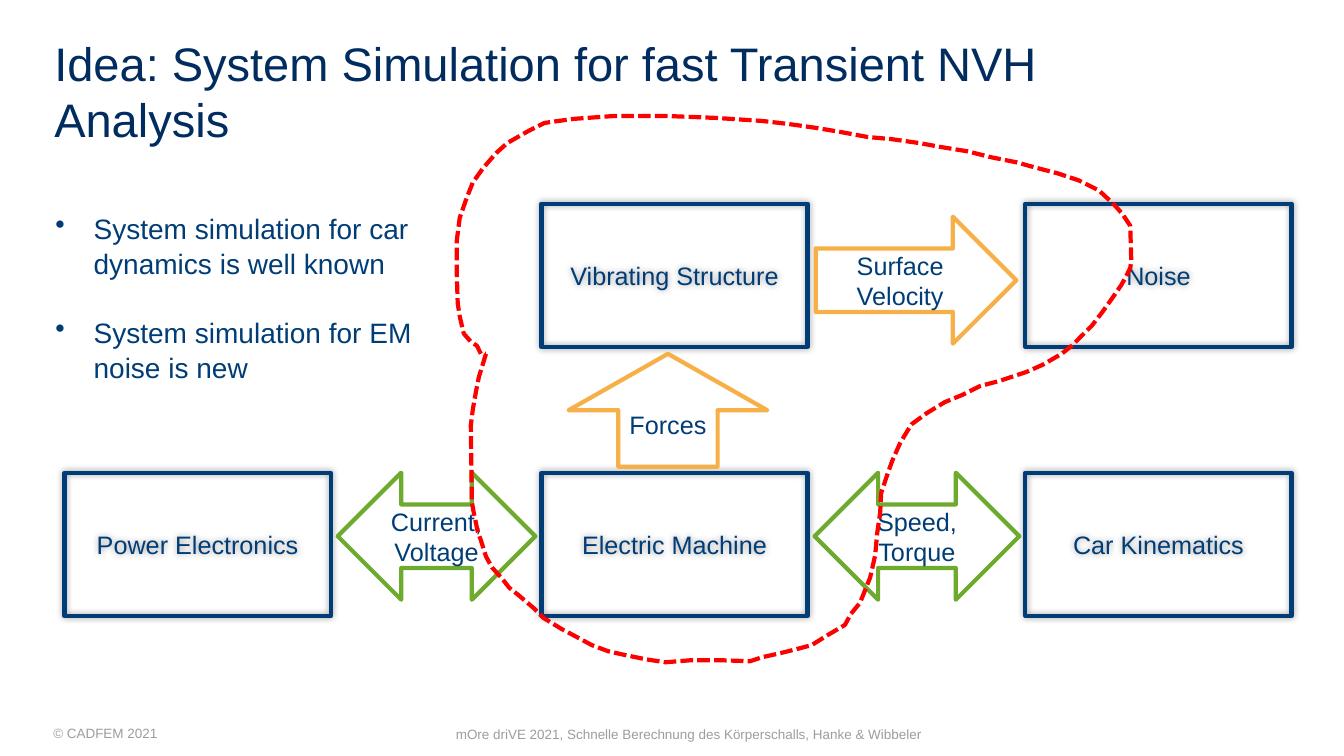
import pptx
import pptx.dml.color
import pptx.enum.dml
import pptx.enum.shapes
import pptx.enum.text
import pptx.oxml
import pptx.oxml.ns
import pptx.util
from pptx.util import Inches

RGB = pptx.dml.color.RGBColor.from_string
SHAPE = pptx.enum.shapes.MSO_SHAPE
ALIGN = pptx.enum.text.PP_ALIGN
ANCHOR = pptx.enum.text.MSO_ANCHOR


class Theme:
    font = "Arial"
    white = RGB("FFFFFF")
    title = RGB("002C5F")
    blue = RGB("003D77")
    green = RGB("6DAA2D")
    orange = RGB("F7B047")
    red = RGB("FF0000")
    grey = RGB("9D9D9C")
    title_size = 33.6
    bullet_size = 20
    label_size = 18
    footer_size = 9.6
    line_width = pptx.util.Pt(3)


def write(shape, lines, size, color, align=ALIGN.CENTER, anchor=ANCHOR.MIDDLE):
    frame = shape.text_frame
    frame.word_wrap = True
    frame.vertical_anchor = anchor
    frame.text = "\n".join(lines)
    for paragraph in frame.paragraphs:
        paragraph.alignment = align
        paragraph.font.name = Theme.font
        paragraph.font.size = pptx.util.Pt(size)
        paragraph.font.color.rgb = color
    return frame


def add_outline(kind, left, top, width, height, color, lines):
    shape = slide.shapes.add_shape(
        kind, Inches(left), Inches(top), Inches(width), Inches(height))
    shape.shadow.inherit = False
    shape.fill.background()
    shape.line.color.rgb = color
    shape.line.width = Theme.line_width
    write(shape, lines, Theme.label_size, Theme.blue)
    return shape


presentation = pptx.Presentation()
presentation.slide_width = Inches(13.33)
presentation.slide_height = Inches(7.5)
slide = presentation.slides.add_slide(presentation.slide_layouts[6])

copyright_box = slide.shapes.add_shape(
    SHAPE.RECTANGLE, Inches(0.43), Inches(7.15), Inches(1.39), Inches(0.25))
copyright_box.shadow.inherit = False
copyright_box.fill.solid()
copyright_box.fill.fore_color.rgb = Theme.white
copyright_box.line.fill.background()
copyright_frame = write(
    copyright_box, ["© CADFEM 2021"], Theme.footer_size, Theme.grey, ALIGN.LEFT)
copyright_frame.margin_right = 0

title = slide.shapes.add_textbox(
    Inches(0.44), Inches(0.29), Inches(10.64), Inches(0.55))
write(title, ["Idea: System Simulation for fast Transient NVH Analysis"],
      Theme.title_size, Theme.title, ALIGN.LEFT, ANCHOR.TOP)

footer = slide.shapes.add_textbox(
    Inches(1.83), Inches(7.16), Inches(10), Inches(0.25))
write(footer, ["mOre driVE 2021, Schnelle Berechnung des Körperschalls, Hanke & Wibbeler"],
      Theme.footer_size, Theme.grey)

columns = (0.64, 5.37, 10.17)
rows = (2.02, 4.69)
blocks = [
    ("Noise", 2, 0),
    ("Power Electronics", 0, 1),
    ("Electric Machine", 1, 1),
    ("Car Kinematics", 2, 1),
    ("Vibrating Structure", 1, 0),
]
for label, column, row in blocks:
    block = add_outline(SHAPE.FLOWCHART_PROCESS, columns[column], rows[row],
                        2.64, 1.42, Theme.blue, [label])
    effects = block._element.spPr.find(pptx.oxml.ns.qn("a:effectLst"))
    effects.append(pptx.oxml.parse_xml(
        f'<a:outerShdw {pptx.oxml.ns.nsdecls("a")} blurRad="63500" dist="0" dir="0">'
        '<a:srgbClr val="000000"><a:alpha val="40000"/></a:srgbClr></a:outerShdw>'))

arrows = [
    (SHAPE.LEFT_RIGHT_ARROW, 3.35, 4.69, 1.96, 1.26, Theme.green, ["Current,", "Voltage"]),
    (SHAPE.LEFT_RIGHT_ARROW, 8.08, 4.69, 2.03, 1.26, Theme.green, ["Speed,", "Torque"]),
    (SHAPE.RIGHT_ARROW, 8.09, 2.15, 1.99, 1.26, Theme.orange, ["Surface Velocity"]),
    (SHAPE.UP_ARROW, 5.64, 3.51, 1.97, 1.12, Theme.orange, ["Forces"]),
]
for arrow in arrows:
    add_outline(*arrow)

scope_points = [
    (482, 351), (479, 361), (475, 374), (472, 389), (469, 406), (467, 422),
    (468, 498), (470, 509), (474, 528), (477, 536), (482, 552), (488, 563),
    (498, 574), (505, 583), (515, 591), (529, 603), (539, 613), (557, 624),
    (574, 633), (587, 640), (603, 646), (616, 649), (640, 654), (660, 657),
    (685, 655), (715, 655), (744, 656), (756, 652), (774, 648), (790, 644),
    (805, 640), (821, 630), (838, 620), (844, 609), (853, 598), (859, 583),
    (863, 573), (868, 551), (870, 529), (873, 508), (874, 489), (880, 471),
    (885, 457), (893, 439), (904, 421), (919, 410), (937, 399), (954, 392),
    (972, 383), (991, 378), (1018, 369), (1034, 362), (1053, 351), (1063, 343),
    (1072, 334), (1083, 323), (1093, 310), (1103, 296), (1112, 283), (1117, 274),
    (1121, 266), (1122, 259), (1121, 224), (1113, 212), (1105, 203), (1090, 189),
    (1070, 179), (1049, 172), (1026, 166), (1008, 161), (983, 156), (959, 150),
    (934, 146), (912, 142), (884, 138), (861, 136), (834, 131), (810, 127),
    (782, 123), (756, 120), (710, 117), (660, 115), (610, 115), (568, 118),
    (540, 122), (524, 130), (503, 142), (492, 152), (479, 167), (469, 181),
    (463, 196), (456, 216), (453, 239), (453, 270), (454, 301), (456, 314),
    (460, 331), (467, 339), (473, 343), (477, 351),
]
builder = slide.shapes.build_freeform(*scope_points[0], scale=Inches(0.01))
builder.add_line_segments(scope_points[1:], close=True)
scope = builder.convert_to_shape()
scope.shadow.inherit = False
scope.fill.background()
scope.line.color.rgb = Theme.red
scope.line.width = Theme.line_width
scope.line.dash_style = pptx.enum.dml.MSO_LINE.SQUARE_DOT
scope.line._ln.find(pptx.oxml.ns.qn("a:prstDash")).set("val", "sysDash")

bullets = slide.shapes.add_textbox(
    Inches(0.45), Inches(2.03), Inches(3.89), Inches(1.78))
bullet_frame = write(
    bullets,
    ["System simulation for car dynamics is well known",
     "System simulation for EM noise is new"],
    Theme.bullet_size, Theme.blue, ALIGN.LEFT, ANCHOR.TOP)
for paragraph in bullet_frame.paragraphs:
    properties = paragraph._p.get_or_add_pPr()
    properties.set("marL", str(Inches(0.38)))
    properties.set("indent", str(-Inches(0.38)))
    properties.insert(0, pptx.oxml.parse_xml(
        f'<a:buChar {pptx.oxml.ns.nsdecls("a")} char="•"/>'))
    paragraph.line_spacing = 1.05
bullet_frame.paragraphs[1].space_before = pptx.util.Pt(24)

presentation.save("out.pptx")
